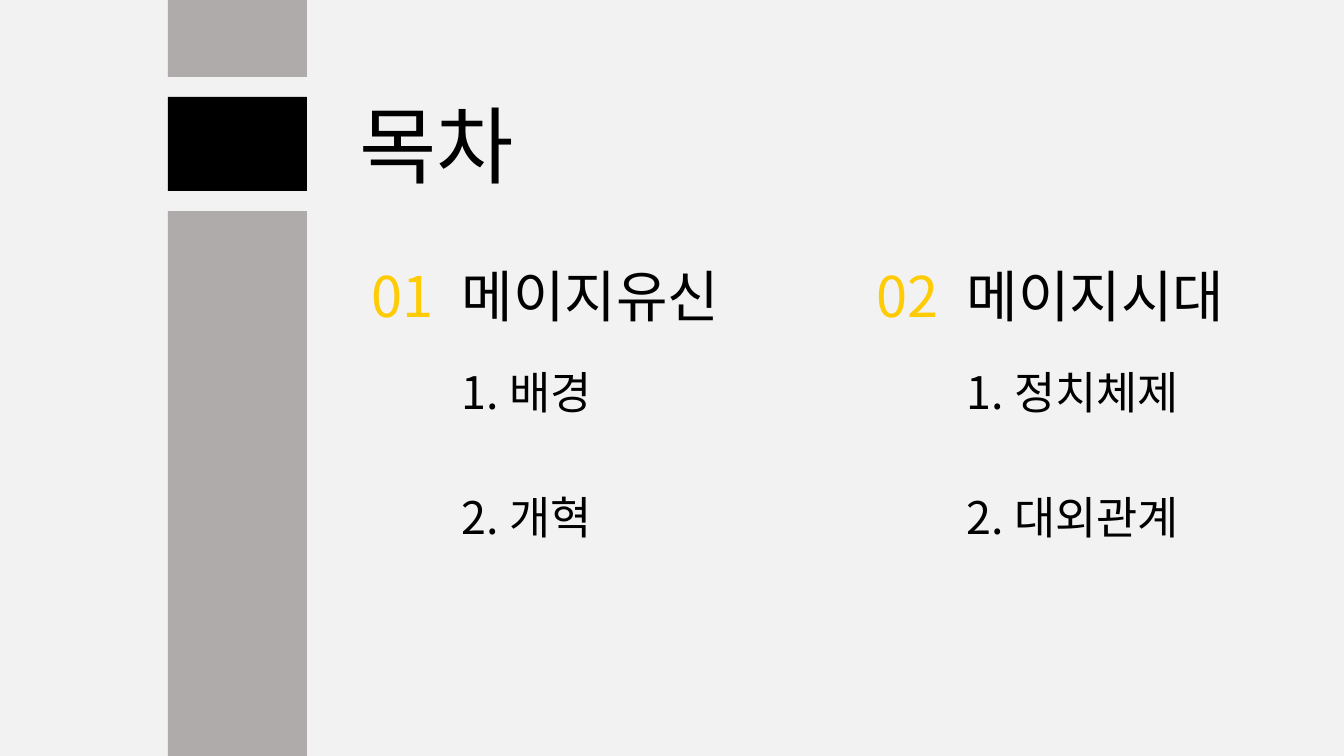
from pptx import Presentation
from pptx.dml.color import RGBColor
from pptx.enum.shapes import MSO_SHAPE
from pptx.enum.text import MSO_ANCHOR, MSO_AUTO_SIZE, PP_ALIGN
from pptx.util import Emu, Pt

FONT = "Noto Sans CJK KR"
BLACK = RGBColor(0x00, 0x00, 0x00)
GRAY = RGBColor(0xAF, 0xAB, 0xAB)
YELLOW = RGBColor(0xFF, 0xCB, 0x05)
PAPER = RGBColor(0xF2, 0xF2, 0xF2)

TITLE = "목차"
CHAPTERS = [
    ("01", "메이지유신", ["1. 배경", "2. 개혁"]),
    ("02", "메이지시대", ["1. 정치체제", "2. 대외관계"]),
]
BARS = [(0, 77, GRAY), (97, 94, BLACK), (211, 545, GRAY)]
BAR_X, BAR_W = 168, 139
TITLE_BOX = (349, 88, 200, 112)
CHAPTER_X, CHAPTER_STEP, CHAPTER_Y = 362, 505, 257
NUMBER_W, HEADING_W, HEADING_H = 90, 325, 78
ITEM_Y, ITEM_STEP, ITEM_H = 360, 125, 65


def px(n):
    """Turn pixels into EMU."""
    return Emu(round(n * 914400 / 100.8))


def write(sp, box, text, size, color=BLACK, wrap=True):
    """Place a text shape and format its single line."""
    sp.left, sp.top, sp.width, sp.height = map(px, box)
    tf = sp.text_frame
    frame = {"word_wrap": wrap, "auto_size": MSO_AUTO_SIZE.SHAPE_TO_FIT_TEXT,
             "vertical_anchor": MSO_ANCHOR.TOP}
    for name, value in frame.items():
        setattr(tf, name, value)
    p = tf.paragraphs[0]
    for name, value in {"alignment": PP_ALIGN.LEFT, "line_spacing": 1.0}.items():
        setattr(p, name, value)
    r = p.add_run()
    r.text = text
    for name, value in {"name": FONT, "size": Pt(size), "bold": False}.items():
        setattr(r.font, name, value)
    r.font.color.rgb = color
    ea = r.font._element.makeelement(
        "{http://schemas.openxmlformats.org/drawingml/2006/main}ea", {"typeface": FONT})
    r.font._element.append(ea)


def main():
    """Build the contents slide."""
    prs = Presentation()
    prs.slide_width, prs.slide_height = px(1344), px(756)
    s = prs.slides.add_slide(prs.slide_layouts[5])
    s.background.fill.solid()
    s.background.fill.fore_color.rgb = PAPER

    for y, h, color in BARS:
        sp = s.shapes.add_shape(MSO_SHAPE.RECTANGLE, px(BAR_X), px(y), px(BAR_W), px(h))
        sp.shadow.inherit = False
        sp.fill.solid()
        sp.fill.fore_color.rgb = color
        sp.line.fill.background()

    write(s.shapes.title, TITLE_BOX, TITLE, 60)

    def add_text(box, *args, **kwargs):
        """Add a text box and write in it."""
        write(s.shapes.add_textbox(*map(px, box)), box, *args, **kwargs)

    for i, (number, heading, items) in enumerate(CHAPTERS):
        x = CHAPTER_X + i * CHAPTER_STEP
        text_x = x + NUMBER_W
        add_text((x, CHAPTER_Y, NUMBER_W, HEADING_H), number, 40, YELLOW, wrap=False)
        add_text((text_x, CHAPTER_Y, HEADING_W, HEADING_H), heading, 40)
        for j, item in enumerate(items):
            add_text((text_x, ITEM_Y + j * ITEM_STEP, HEADING_W, ITEM_H), item, 32)

    prs.save("out.pptx")


if __name__ == "__main__":
    main()
